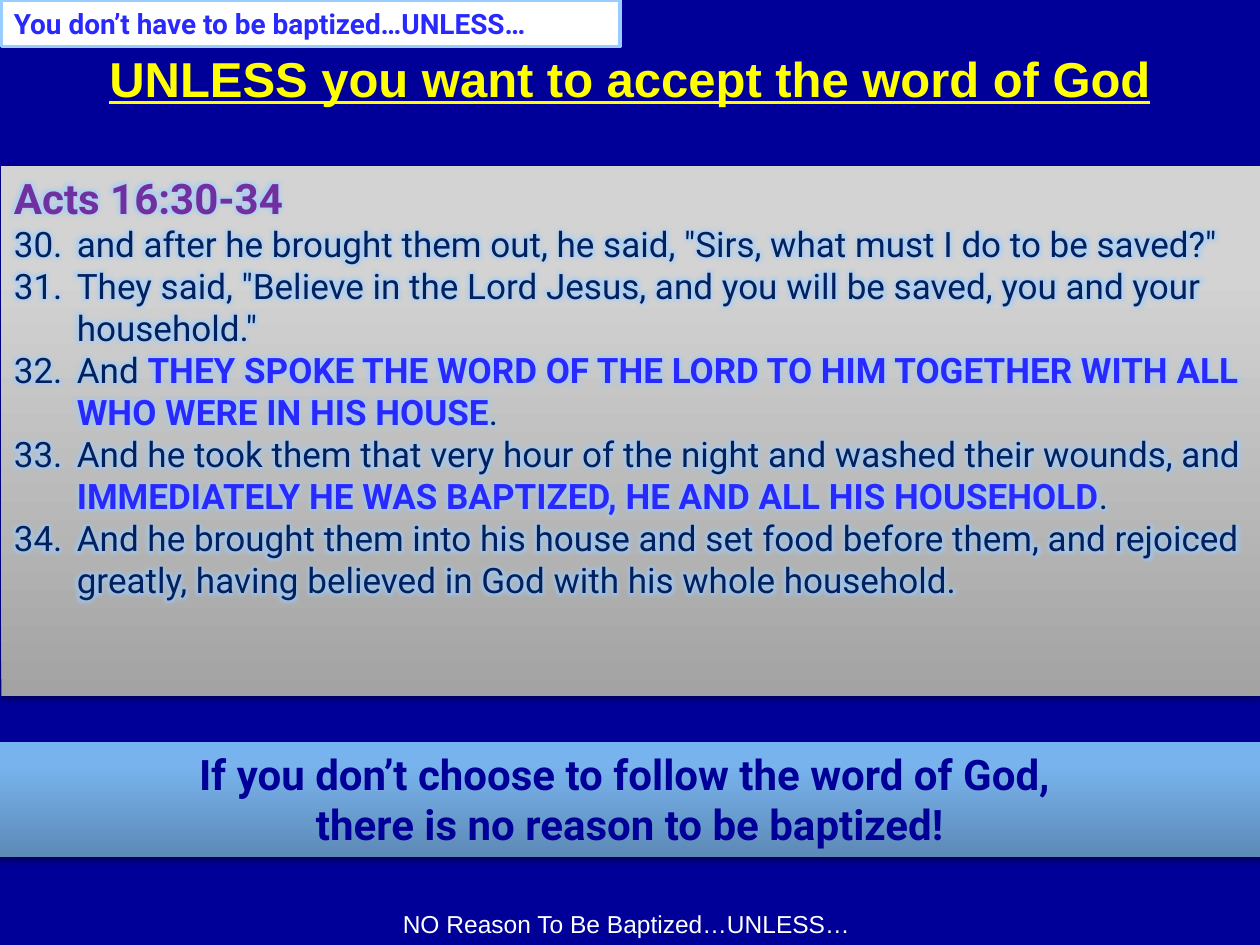
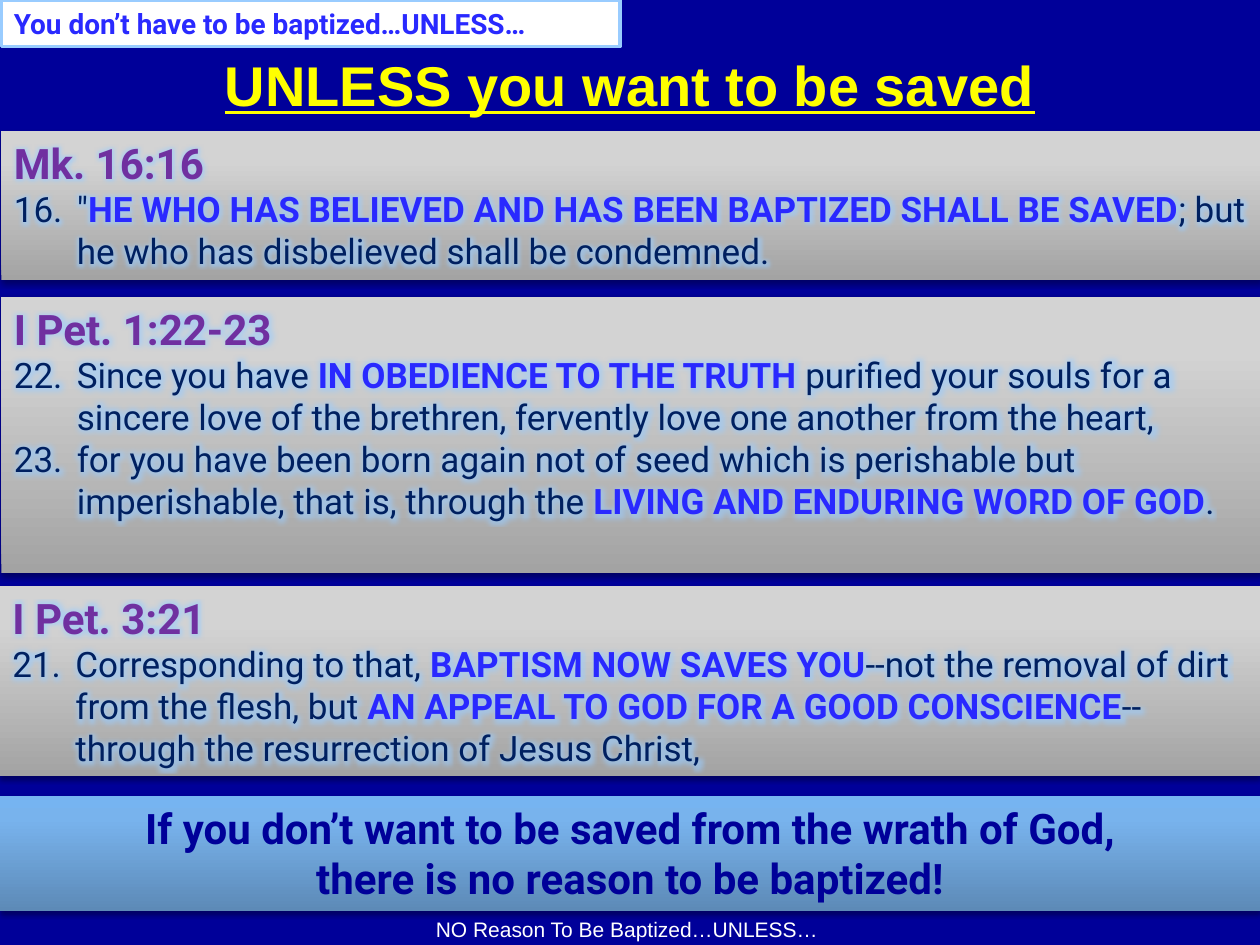
from copy import deepcopy

from lxml.etree import SubElement
from pptx import Presentation
from pptx.dml.color import RGBColor
from pptx.enum.shapes import MSO_SHAPE
from pptx.enum.text import MSO_ANCHOR, MSO_AUTO_SIZE, PP_ALIGN
from pptx.oxml.ns import qn
from pptx.util import Cm, Pt

COLORS = {
    "background": "000099",
    "title": "FFFF00",
    "footer": "FFFFFF",
    "tag fill": "FFFFFF",
    "tag line": "99CCFF",
    "reference": "7030A0",
    "verse": "002060",
    "emphasis": "2929FF",
    "conclusion": "000099",
    "shadow": "000000",
    "glow": "99CCFF",
}
# Gradient stops run from the bottom edge to the top edge
PANEL_STOPS = [(0, "A3A3A3"), (0.8, "D3D3D3"), (1, "D4D4D4")]
BAND_STOPS = [(0, "5D8AB7"), (0.8, "78B3ED"), (1, "76B4F1")]

FORMATS = {
    "title": {"bold": True, "underline": True, "name": "Arial"},
    "footer": {"name": "Arial"},
    "tag": {"size": Pt(16), "bold": True, "name": "Roboto"},
    "reference": {"size": Pt(24), "bold": True, "name": "Roboto"},
    "verse": {"size": Pt(20), "bold": False, "name": "Roboto"},
    "emphasis": {"size": Pt(20), "bold": True, "name": "Roboto"},
    "conclusion": {"size": Pt(24), "bold": True, "name": "Roboto"},
}
TAG_COLOR = "emphasis"
HANGING = Cm(1.27)


def rgb(name):
    return RGBColor.from_string(COLORS[name])


def add_color(parent, name, opacity):
    color = SubElement(parent, qn("a:srgbClr"), val=COLORS[name])
    SubElement(color, qn("a:alpha"), val=str(opacity * 1000))


class SlideBuilder:
    def __init__(self):
        self.deck = Presentation()
        self.deck.slide_width, self.deck.slide_height = Cm(25.4), Cm(19.05)
        fill = self.deck.slide_master.background.fill
        fill.solid()
        fill.fore_color.rgb = rgb("background")
        self.page = None

    def new_page(self):
        self.page = self.deck.slides.add_slide(self.deck.slide_layouts[5])

    # Text
    def span(self, para, text, style, color=None, glow=False, size=None):
        span = para.add_run()
        span.text = text
        span.font.color.rgb = rgb(color or style)
        if glow:
            effects = SubElement(span.font._element, qn("a:effectLst"))
            add_color(SubElement(effects, qn("a:glow"), rad=str(Pt(8))), "glow", 60)
        values = dict(FORMATS[style])
        if size:
            values["size"] = Pt(size)
        for key, value in values.items():
            setattr(span.font, key, value)

    def paragraph(self, frame, index, align=PP_ALIGN.LEFT, hanging=True):
        para = frame.add_paragraph() if index else frame.paragraphs[0]
        para.alignment = align
        if hanging:
            properties = para._p.get_or_add_pPr()
            properties.set("marL", str(HANGING))
            properties.set("indent", str(-HANGING))
        return para

    def prepare(self, box, anchor=MSO_ANCHOR.TOP):
        frame = box.text_frame
        settings = {"word_wrap": True, "auto_size": MSO_AUTO_SIZE.NONE,
                    "vertical_anchor": anchor}
        for key, value in settings.items():
            setattr(frame, key, value)
        return frame

    # Elements
    def title(self, text, top, height, size):
        box = self.page.shapes.title
        place = {"left": 0, "top": Cm(top), "width": Cm(25.4), "height": Cm(height)}
        for key, value in place.items():
            setattr(box, key, value)
        frame = self.prepare(box, MSO_ANCHOR.MIDDLE)
        para = self.paragraph(frame, 0, PP_ALIGN.CENTER, hanging=False)
        self.span(para, text, "title", size=size)

    def footer(self, top, height, size):
        box = self.page.shapes.add_textbox(0, Cm(top), Cm(25.4), Cm(height))
        para = self.paragraph(self.prepare(box), 0, PP_ALIGN.CENTER, hanging=False)
        self.span(para, "NO Reason To Be Baptized…UNLESS… ", "footer", size=size)

    def rectangle(self, left, top, width, height):
        box = self.page.shapes.add_shape(
            MSO_SHAPE.RECTANGLE, Cm(left), Cm(top), Cm(width), Cm(height))
        box.shadow.inherit = False
        return box

    def shaded(self, left, top, width, height, stops):
        box = self.rectangle(left, top, width, height)
        box.line.fill.background()
        box.fill.gradient()
        box.fill.gradient_angle = 90
        stop_list = box._element.spPr.find(".//" + qn("a:gsLst"))
        stop_list.append(deepcopy(stop_list[0]))
        for stop, (position, color) in zip(box.fill.gradient_stops, stops):
            stop.position = position
            stop.color.rgb = RGBColor.from_string(color)
        effects = box._element.spPr.find(qn("a:effectLst"))
        shadow = SubElement(effects, qn("a:outerShdw"), blurRad=str(Pt(3.1)),
                            dist=str(Pt(1.8)), dir="5400000", rotWithShape="0")
        add_color(shadow, "shadow", 35)
        return box

    def tag(self):
        box = self.rectangle(0.03, 0, 12.47, 0.94)
        box.fill.solid()
        box.fill.fore_color.rgb = rgb("tag fill")
        box.line.color.rgb = rgb("tag line")
        box.line.width = Pt(2)
        para = self.paragraph(self.prepare(box), 0)
        self.span(para, "You don’t have to be baptized…UNLESS…", "tag", TAG_COLOR)

    def passage(self, left, top, height, reference, verses):
        """Verses map a number to text; asterisks enclose emphasis."""
        frame = self.prepare(self.shaded(left, top, 25.4, height, PANEL_STOPS))
        self.span(self.paragraph(frame, 0), reference, "reference", glow=True)
        for index, (number, verse) in enumerate(verses.items(), 1):
            para = self.paragraph(frame, index)
            for part, text in enumerate(f"{number}.\t{verse}".split("*")):
                self.span(para, text, "emphasis" if part % 2 else "verse", glow=True)

    def conclusion(self, left, top, width, condition):
        frame = self.prepare(self.shaded(left, top, width, 2.31, BAND_STOPS))
        for index, text in enumerate([condition, "there is no reason to be baptized!"]):
            para = self.paragraph(frame, index, PP_ALIGN.CENTER)
            self.span(para, text, "conclusion")


def main():
    builder = SlideBuilder()

    # Accepting the word of God
    builder.new_page()
    builder.footer(18.21, 0.86, 14)
    builder.title("UNLESS you want to accept the word of God", 0.46, 2.21, 28)
    builder.passage(0.03, 3.35, 10.69, "Acts 16:30-34", {
        30: 'and after he brought them out, he said, "Sirs, what must I do to be saved?"',
        31: 'They said, "Believe in the Lord Jesus, and you will be saved, '
            'you and your household."',
        32: "And *THEY SPOKE THE WORD OF THE LORD TO HIM TOGETHER WITH ALL "
            "WHO WERE IN HIS HOUSE*.",
        33: "And he took them that very hour of the night and washed their wounds, and "
            "*IMMEDIATELY HE WAS BAPTIZED, HE AND ALL HIS HOUSEHOLD*.",
        34: "And he brought them into his house and set food before them, and rejoiced "
            "greatly, having believed in God with his whole household.",
    })
    builder.tag()
    builder.conclusion(-0.03, 14.96, 25.45,
                       "If you don’t choose to follow the word of God, ")

    # Being saved
    builder.new_page()
    builder.footer(18.36, 0.69, 12)
    builder.title("UNLESS you want to be saved", 0.84, 1.7, 32)
    builder.tag()
    builder.passage(0.03, 2.64, 3, "Mk. 16:16", {
        16: '"*HE WHO HAS BELIEVED AND HAS BEEN BAPTIZED SHALL BE SAVED*; '
            "but he who has disbelieved shall be condemned.",
    })
    builder.passage(0.03, 5.99, 5.56, "I Pet. 1:22-23", {
        22: "Since you have *IN OBEDIENCE TO THE TRUTH *purified your souls for a "
            "sincere love of the brethren, fervently love one another from the heart,",
        23: "for you have been born again not of seed which is perishable but "
            "imperishable, that is, through the *LIVING AND ENDURING WORD OF GOD*.",
    })
    builder.passage(0, 11.81, 3.84, "I Pet. 3:21", {
        21: "Corresponding to that, *BAPTISM NOW SAVES YOU*--not the removal of dirt "
            "from the flesh, but *AN APPEAL TO GOD FOR A GOOD CONSCIENCE*"
            "--through the resurrection of Jesus Christ,",
    })
    builder.conclusion(0, 16.05, 25.4,
                       "If you don’t want to be saved from the wrath of God,")

    builder.deck.save("out.pptx")


if __name__ == "__main__":
    main()
